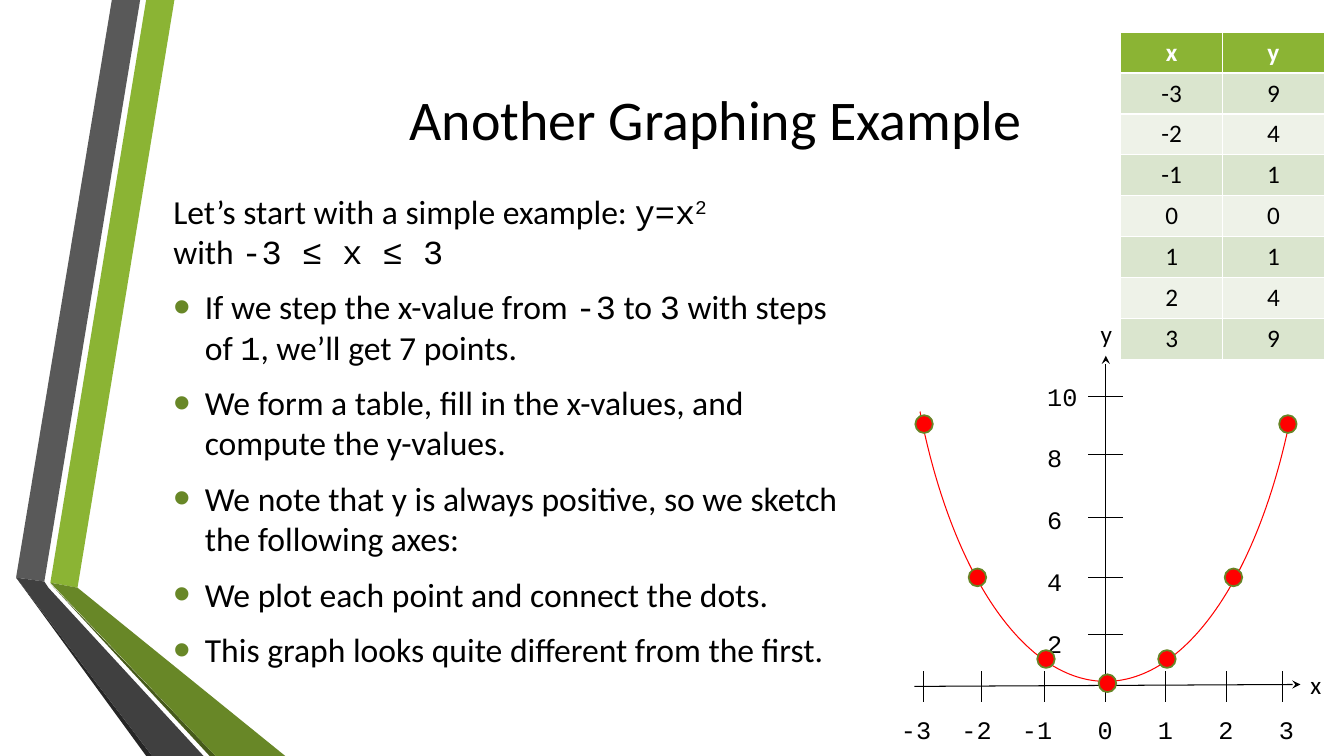
from dataclasses import dataclass

import lxml.etree
import pptx
import pptx.dml.color
import pptx.enum.shapes
import pptx.enum.text
import pptx.oxml.ns
import pptx.util

Pt = pptx.util.Pt
SHAPE = pptx.enum.shapes.MSO_SHAPE
ALIGN = pptx.enum.text.PP_ALIGN
ANCHOR = pptx.enum.text.MSO_ANCHOR


@dataclass(frozen=True)
class Theme:
    sans: str = "Calibri"
    mono: str = "Courier New"
    title: int = 40
    body: int = 24
    label: int = 18
    ink: str = "000000"
    paper: str = "FFFFFF"
    curve: str = "FF0000"
    dot_edge: str = "678526"
    green: str = "8BB434"
    bullet: str = "688727"
    stripes: tuple = ("DAE5CE", "EEF2E8")
    gray: str = "595959"
    gray_edge: str = "262626"
    green_edge: str = "465A1A"
    gray_fold: str = "404040"


@dataclass(frozen=True)
class Box:
    left: float
    top: float
    width: float
    height: float

    def inner(self, across, down, width, height):
        return Box(self.left + across, self.top + down, width, height)

    def frame(self):
        return [Pt(length) for length in (self.left, self.top, self.width, self.height)]


THEME = Theme()

RIBBONS = [
    (THEME.green, [(36, 416.2), (55.4, 419.8), (124.6, 0), (104.4, 0)]),
    (THEME.gray, [(100.1, 0), (79.9, 0), (11.5, 412.6), (31.7, 415.4)]),
    (THEME.gray_edge, [(11.5, 412.6), (104.4, 540), (108.7, 540)]),
    (THEME.green_edge, [(36, 416.9), (149.8, 540), (154.1, 540)]),
    (THEME.bullet, [(36, 416.2), (154.1, 540), (203.8, 540), (55.4, 419.8)]),
    (THEME.gray_fold, [(145.4, 540), (34.6, 419.8), (31.7, 415.4), (11.5, 412.6), (108.7, 540)]),
]

POINTS = [(x, x * x) for x in range(-3, 4)]

INTRO = [
    ("Let’s start with a simple example: ", "sans"), ("y=x", "mono"), ("2", "power"),
    ("\vwith ", "sans"), ("-3 ≤ x ≤ 3", "mono"),
]
BULLETS = [
    [("If we step the x-value from ", "sans"), ("-3", "mono"), (" to ", "sans"), ("3", "mono"),
     (" with steps of ", "sans"), ("1", "mono"), (", we’ll get 7 points.", "sans")],
    [("We form a table, fill in the x-values, and compute the y-values.", "sans")],
    [("We note that y is always positive, so we sketch the following axes:", "sans")],
    [("We plot each point and connect the dots.", "sans")],
    [("This graph looks quite different from the first.", "sans")],
]


def rgb(value):
    return pptx.dml.color.RGBColor.from_string(value)


def add_xml(parent, tag, **attributes):
    return lxml.etree.SubElement(parent, pptx.oxml.ns.qn(tag), attributes)


def style_para(para, size, name=THEME.sans, color=THEME.ink, bold=False):
    para.font.size = Pt(size)
    para.font.name = name
    para.font.bold = bold
    para.font.color.rgb = rgb(color)


def place(shape, box):
    shape.left, shape.top, shape.width, shape.height = box.frame()


def add_ribbons(page, box):
    for color, corners in RIBBONS:
        outline = [(across * 10, down * 10) for across, down in corners]
        builder = page.shapes.build_freeform(*outline[0], scale=Pt(1) / 10)
        builder.add_line_segments(outline[1:], close=True)
        ribbon = builder.convert_to_shape(Pt(box.left), Pt(box.top))
        ribbon.fill.solid()
        ribbon.fill.fore_color.rgb = rgb(color)
        ribbon.line.fill.background()
        ribbon.shadow.inherit = False


def add_title(page, box):
    title = page.shapes.title
    place(title, box)
    title.text_frame.text = "Another Graphing Example"
    title.text_frame.auto_size = pptx.enum.text.MSO_AUTO_SIZE.NONE
    title.text_frame.vertical_anchor = ANCHOR.MIDDLE
    para = title.text_frame.paragraphs[0]
    para.alignment = ALIGN.CENTER
    style_para(para, THEME.title)


def add_spans(para, spans):
    for text, kind in spans:
        if text.startswith("\v"):
            para.add_line_break()
        span = para.add_run()
        span.text = text.lstrip("\v")
        if kind != "sans":
            span.font.name = THEME.mono
        if kind == "power":
            span.font._element.set("baseline", "30000")


def add_body(page, box):
    body = page.placeholders[1]
    place(body, box)
    frame = body.text_frame
    frame.auto_size = pptx.enum.text.MSO_AUTO_SIZE.NONE
    for index, spans in enumerate([INTRO] + BULLETS):
        para = frame.add_paragraph() if index else frame.paragraphs[0]
        para.space_before = Pt(4.8)
        para.space_after = Pt(6)
        properties = para._p.get_or_add_pPr()
        indent = Pt(22.5) if index else 0
        properties.set("marL", str(indent))
        properties.set("indent", str(-indent))
        if index:
            color = add_xml(properties, "a:buClr")
            add_xml(color, "a:srgbClr", val=THEME.bullet)
            add_xml(properties, "a:buSzPct", val="145000")
            add_xml(properties, "a:buFont", typeface="Arial")
            add_xml(properties, "a:buChar", char="•")
        else:
            add_xml(properties, "a:buNone")
        style_para(para, THEME.body)
        add_spans(para, spans)


def add_values(page, box):
    rows = [("x", "y")] + POINTS
    table = page.shapes.add_table(len(rows), 2, *box.frame()).table
    for row, values in enumerate(rows):
        for column, value in enumerate(values):
            cell = table.cell(row, column)
            cell.text = str(value)
            cell.fill.solid()
            cell.fill.fore_color.rgb = rgb(THEME.stripes[(row - 1) % 2] if row else THEME.green)
            para = cell.text_frame.paragraphs[0]
            para.alignment = ALIGN.CENTER
            style_para(para, THEME.label, color=THEME.ink if row else THEME.paper, bold=not row)


def add_line(page, box, start, end, arrow=False):
    ends = [Pt(length) for across, down in (start, end)
            for length in (box.left + across, box.top + down)]
    line = page.shapes.add_connector(pptx.enum.shapes.MSO_CONNECTOR.STRAIGHT, *ends)
    line.line.color.rgb = rgb(THEME.ink)
    line.line.width = Pt(0.75)
    if arrow:
        add_xml(line.line._get_or_add_ln(), "a:tailEnd", type="stealth")
    add_xml(line._element.spPr, "a:effectLst")


def add_label(page, box, lines, name=THEME.sans, wrap=True, gap=0):
    frame = page.shapes.add_textbox(*box.frame()).text_frame
    frame.word_wrap = wrap
    for index, text in enumerate(lines):
        para = frame.add_paragraph() if index else frame.paragraphs[0]
        para.text = text
        para.space_before = Pt(gap if index else 0)
        style_para(para, THEME.label, name)
    return frame


def add_parabola(page, box):
    curve = page.shapes.add_shape(SHAPE.ARC, *box.inner(-167, -202.3, 640.8, 289.4).frame())
    curve.rotation = 270
    curve.adjustments[0], curve.adjustments[1] = 80.98, 135.67
    curve.fill.background()
    curve.line.color.rgb = rgb(THEME.curve)
    curve.line.width = Pt(0.75)
    curve.shadow.inherit = False


def add_axes(page, box):
    numbers = add_label(page, box.inner(0, 283, 297.4, 28.8),
                        ["\t".join(str(x) for x, y in POINTS)], THEME.mono)
    stops = lxml.etree.Element(pptx.oxml.ns.qn("a:tabLst"))
    for index in range(1, len(POINTS)):
        add_xml(stops, "a:tab", pos=str(Pt(21.6 + 43.2 * index)), algn="r")
    properties = numbers.paragraphs[0]._p.get_or_add_pPr()
    properties.insert(len(properties) - 1, stops)
    add_line(page, box, (16.6, 266.4), (292.4, 265), arrow=True)
    add_line(page, box, (153.4, 268.6), (153.4, 30.2), arrow=True)
    for across in (23, 64.8, 109.4, 153.4, 195.8, 239.8, 279.4):
        add_line(page, box, (across, 255.6), (across, 277.2))
    for down in (59, 100.8, 145.4, 188.6, 229):
        add_line(page, box, (165.6, down), (140.4, down))
    add_label(page, box.inner(142.6, 0, 23, 28.8), ["y"], wrap=False)
    add_label(page, box.inner(292.4, 250.6, 23, 28.8), ["x"], wrap=False)
    add_label(page, box.inner(104.4, 44.6, 37.4, 225.4),
              [str(y) for y in range(10, 0, -2)], THEME.mono, gap=22.5)


def add_dots(page, box):
    heights = {9: 72.7, 4: 182.2, 1: 240.5, 0: 257.8}
    acrosses = (17.3, 55.4, 104.4, 148.3, 190.8, 238.3, 277.2)
    for across, (x, y) in zip(acrosses, POINTS):
        dot = page.shapes.add_shape(SHAPE.OVAL, *box.inner(across, heights[y], 12.5, 12.7).frame())
        dot.fill.solid()
        dot.fill.fore_color.rgb = rgb(THEME.curve)
        dot.line.color.rgb = rgb(THEME.dot_edge)
        dot.line.width = Pt(1.25)
        dot.shadow.inherit = False


def add_graph(page, box):
    add_parabola(page, box)
    add_axes(page, box)
    add_dots(page, box)


def main():
    deck = pptx.Presentation()
    deck.slide_width, deck.slide_height = Pt(960), Pt(540)
    page = deck.slides.add_slide(deck.slide_layouts[1])
    add_ribbons(page, Box(0, 0, 204, 540))
    add_title(page, Box(116.6, 54, 789.1, 61.2))
    add_body(page, Box(116.6, 132.5, 501.8, 383))
    add_values(page, Box(800.6, 23, 145.4, 233.3))
    add_graph(page, Box(636.5, 223.9, 315.4, 311.8))
    deck.save("out.pptx")


if __name__ == "__main__":
    main()
